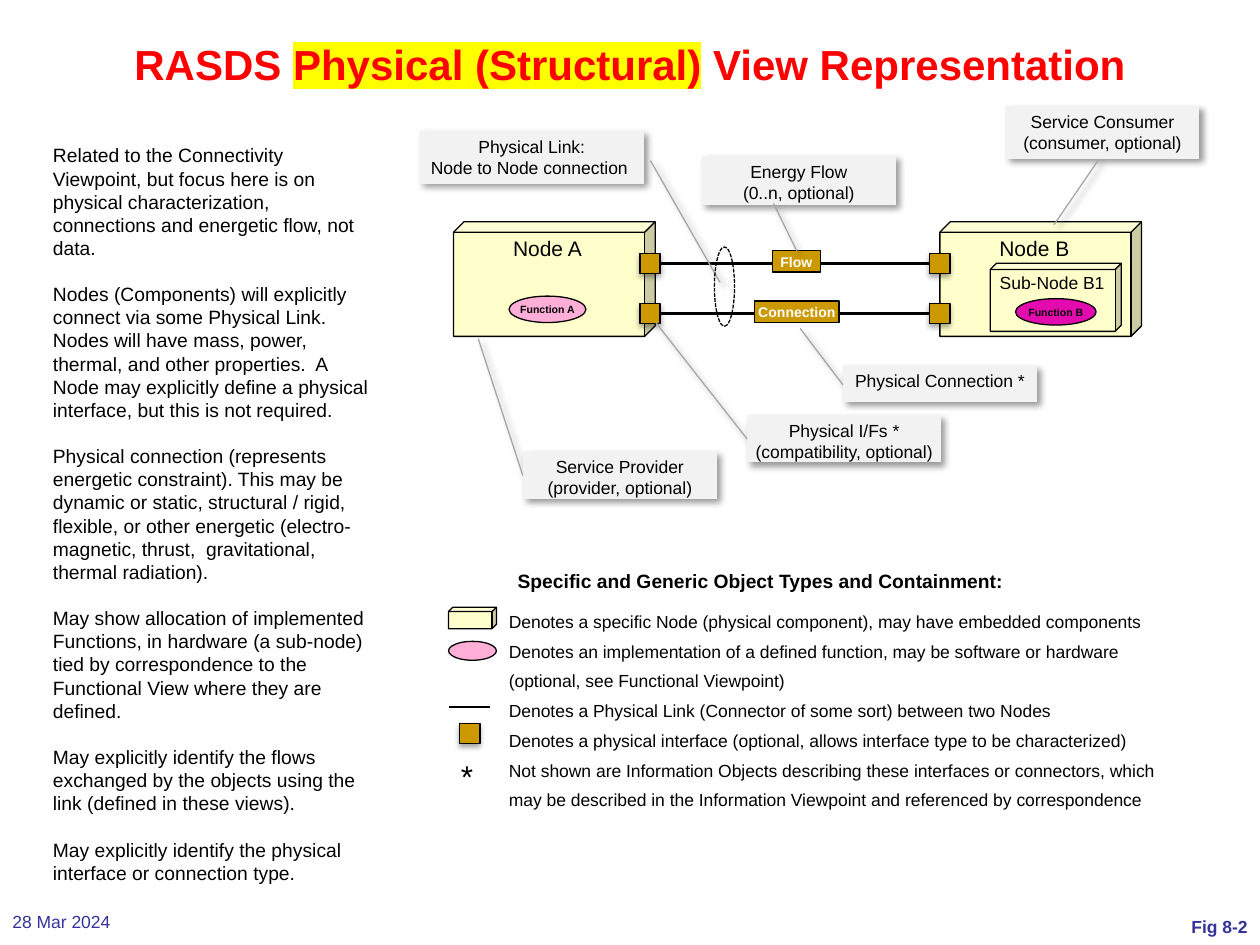
from dataclasses import dataclass

from lxml.etree import SubElement
from pptx import Presentation
from pptx.dml.color import RGBColor
from pptx.enum.dml import MSO_LINE
from pptx.enum.shapes import MSO_CONNECTOR, MSO_SHAPE as Preset
from pptx.enum.text import MSO_ANCHOR as Anchor, MSO_AUTO_SIZE as AutoSize, PP_ALIGN as Align
from pptx.oxml.ns import qn
from pptx.util import Emu, Inches, Pt


@dataclass(frozen=True)
class Theme:
    font: str = "Arial"
    title: str = "FF0000"
    highlight: str = "FFFF00"
    ink: str = "000000"
    footer: str = "333399"
    node: str = "FFFFCC"
    function: str = "FFAED7"
    other_function: str = "E30BAD"
    interface: str = "CC9900"
    callout: str = "F2F2F2"
    leader: str = "A6A6A6"
    light: str = "FFFFFF"
    title_size: int = 24
    star_size: int = 18
    node_size: int = 12
    body_size: int = 11
    label_size: int = 10
    tag_size: int = 8
    function_size: int = 6
    thin: float = 0.75
    link: float = 1.5


THEME = Theme()
INTERFACE_SHADOW = (35, 3.1, 1.8, 90)
CALLOUT_SHADOW = (40, 4, 3, 45)
INTERFACE_SIDE = 0.16
INTERFACE_COLUMNS = (5.08, 7.38)
LINK_ROWS = (2.01, 2.41)
CUBE_DEPTH = 0.091

TITLE = [("RASDS ", False), ("Physical (Structural)", True), (" View Representation", False)]
BODY = [
    "Related to the Connectivity Viewpoint, but focus here is on physical characterization, "
    "connections and energetic flow, not data.",
    "Nodes (Components) will explicitly connect via some Physical Link. Nodes will have mass, power, "
    "thermal, and other properties.  A Node may explicitly define a physical interface, "
    "but this is not required.",
    "Physical connection (represents energetic constraint). This may be dynamic or static, "
    "structural / rigid, flexible, or other energetic (electro-magnetic, thrust,  gravitational, "
    "thermal radiation).",
    "May show allocation of implemented Functions, in hardware (a sub-node) tied by correspondence "
    "to the Functional View where they are defined.",
    "May explicitly identify the flows exchanged by the objects using the link (defined in these views).",
    "May explicitly identify the physical interface or connection type.",
]
LEGEND_TITLE = "Specific and Generic Object Types and Containment:"
LEGEND = [
    "Denotes a specific Node (physical component), may have embedded components",
    "Denotes an implementation of a defined function, may be software or hardware "
    "(optional, see Functional Viewpoint)",
    "Denotes a Physical Link (Connector of some sort) between two Nodes",
    "Denotes a physical interface (optional, allows interface type to be characterized)",
    "Not shown are Information Objects describing these interfaces or connectors, which "
    "may be described in the Information Viewpoint and referenced by correspondence",
]
NODES = [
    ((3.6, 1.76, 1.6, 0.91), "Node A", (3.97, 1.82, 0.75, 0.3), THEME.node_size),
    ((7.46, 1.76, 1.6, 0.91), "Node B", (7.83, 1.82, 0.76, 0.3), THEME.node_size),
    ((7.86, 2.09, 1.04, 0.54), "Sub-Node B1", (7.83, 2.11, 1.04, 0.27), THEME.label_size),
]
FUNCTIONS = [
    ("Function A", (4.04, 2.35, 0.61, 0.21), THEME.function),
    ("Function B", (8.06, 2.37, 0.64, 0.21), THEME.other_function),
]
TAGS = [("Flow", (6.13, 1.99, 0.38, 0.17)), ("Connection", (5.99, 2.39, 0.67, 0.17))]
CALLOUTS = [
    (["Physical Link:\nNode to Node connection "], (3.33, 1.04, 1.78, 0.42), (0.56, -0.03, 2.86, -0.34)),
    (["Service Provider", "(provider, optional)"], (4.15, 3.58, 1.54, 0.38), (0.51, 1, -2.35, 1.23)),
    (["Service Consumer", "(consumer, optional)"], (7.98, 0.84, 1.54, 0.42), (1.02, 0.52, 2.25, 0.75)),
    (["Physical Connection *"], (6.69, 2.9, 1.54, 0.29), (0.53, 1, -1.01, 1.22)),
    (["Energy Flow", "(0..n, optional)"], (5.57, 1.24, 1.54, 0.39), (0.96, 0.63, 1.93, 0.51)),
    (["Physical I/Fs *", "(compatibility, optional)"], (5.93, 3.29, 1.54, 0.38), (0.51, 1, -1.92, 1.47)),
]
FOOTERS = [
    ("28 Mar 2024", (0, 7.17, 1.89, 0.29), Align.LEFT, False),
    ("Fig 8-2", (8.11, 7.21, 1.89, 0.29), Align.RIGHT, True),
]


def rgb(color):
    return RGBColor.from_string(color)


def place(shape, box):
    shape.left, shape.top, shape.width, shape.height = map(Inches, box)


def add_run(paragraph, text, size, color=THEME.ink, bold=False):
    run = paragraph.add_run()
    run.text = text
    run.font.name, run.font.size, run.font.bold = THEME.font, Pt(size), bold
    run.font.color.rgb = rgb(color)
    return run


def write(shape, paragraphs, size, color=THEME.ink, bold=False, align=Align.LEFT,
          anchor=Anchor.TOP, wrap=True, inset=None, spacing=None, after=0):
    frame = shape.text_frame
    frame.word_wrap, frame.vertical_anchor, frame.auto_size = wrap, anchor, AutoSize.NONE
    if inset is not None:
        frame.margin_left = frame.margin_right = Inches(inset)
        frame.margin_top = frame.margin_bottom = Inches(inset)
    for index, text in enumerate(paragraphs):
        paragraph = frame.add_paragraph() if index else frame.paragraphs[0]
        paragraph.alignment = align
        paragraph.space_before, paragraph.space_after = Pt(0), Pt(after)
        if spacing:
            paragraph.line_spacing = spacing
        for part, line in enumerate(text.split("\n")):
            if part:
                paragraph.add_line_break()
            add_run(paragraph, line, size, color, bold)


def add_text(slide, box, paragraphs, size, **style):
    shape = slide.shapes.add_textbox(*map(Inches, box))
    write(shape, paragraphs, size, **style)


def add_shadow(shape, opacity, blur, distance, angle):
    effects = shape._element.spPr.find(qn("a:effectLst"))
    shadow = SubElement(effects, qn("a:outerShdw"), blurRad=str(Pt(blur)), dist=str(Pt(distance)),
                        dir=str(angle * 60000), algn="tl", rotWithShape="0")
    color = SubElement(shadow, qn("a:srgbClr"), val=THEME.ink)
    SubElement(color, qn("a:alpha"), val=str(opacity * 1000))


def add_preset(slide, preset, box, fill=None, line=THEME.ink, adjustments=(), shadow=None):
    shape = slide.shapes.add_shape(preset, *map(Inches, box))
    shape.shadow.inherit = False
    if fill:
        shape.fill.solid()
        shape.fill.fore_color.rgb = rgb(fill)
    else:
        shape.fill.background()
    shape.line.color.rgb, shape.line.width = rgb(line), Pt(THEME.thin)
    for index, value in enumerate(adjustments):
        shape.adjustments[index] = value
    if shadow:
        add_shadow(shape, *shadow)
    return shape


def add_interface(slide, left, top):
    box = (left, top, INTERFACE_SIDE, INTERFACE_SIDE)
    return add_preset(slide, Preset.RECTANGLE, box, THEME.interface, shadow=INTERFACE_SHADOW)


def add_link(slide, left, right, y):
    ends = map(Inches, (left, y, right, y))
    link = slide.shapes.add_connector(MSO_CONNECTOR.STRAIGHT, *ends)
    link.line.color.rgb, link.line.width = rgb(THEME.ink), Pt(THEME.link)
    SubElement(link._element.spPr, qn("a:effectLst"))
    return link


def add_headings(slide):
    title, body = slide.placeholders
    place(title, (0.5, 0.3, 9, 1.25))
    write(title, [], THEME.title_size)
    paragraph = title.text_frame.paragraphs[0]
    paragraph.alignment, paragraph.line_spacing = Align.CENTER, 0.9
    for text, marked in TITLE:
        run = add_run(paragraph, text, THEME.title_size, THEME.title, True)
        if marked:
            highlight = SubElement(run.font._element, qn("a:highlight"))
            SubElement(highlight, qn("a:srgbClr"), val=THEME.highlight)
            run.font._element.find(qn("a:solidFill")).addnext(highlight)
    place(body, (0.32, 1.09, 2.77, 6.02))
    write(body, BODY, THEME.body_size, after=13.3)
    for paragraph in body.text_frame.paragraphs:
        properties = paragraph._p.get_or_add_pPr()
        properties.set("marL", "0")
        properties.set("indent", "0")
        SubElement(properties, qn("a:buNone"))


def add_diagram(slide):
    for box, name, label_box, size in NODES:
        add_preset(slide, Preset.CUBE, box, THEME.node, adjustments=[CUBE_DEPTH])
        add_text(slide, label_box, [name], size, align=Align.CENTER, wrap=False)
    for name, box, fill in FUNCTIONS:
        oval = add_preset(slide, Preset.OVAL, box, fill)
        write(oval, [name], THEME.function_size, bold=True, align=Align.CENTER,
              anchor=Anchor.MIDDLE, wrap=False)
    for top in LINK_ROWS:
        start, end = [add_interface(slide, left, top) for left in INTERFACE_COLUMNS]
        link = add_link(slide, *INTERFACE_COLUMNS, top + INTERFACE_SIDE / 2)
        link.begin_connect(start, 3)
        link.end_connect(end, 1)
    for name, box in TAGS:
        tag = add_preset(slide, Preset.RECTANGLE, box, THEME.interface)
        write(tag, [name], THEME.tag_size, THEME.light, True, Align.CENTER, inset=0.02)
    for lines, box, leader in CALLOUTS:
        callout = add_preset(slide, Preset.LINE_CALLOUT_1_NO_BORDER, box, THEME.callout,
                             THEME.leader, leader, CALLOUT_SHADOW)
        callout._element.spPr.xfrm.set("flipH", "1")
        write(callout, lines, THEME.label_size, align=Align.CENTER, inset=0.04)
    ring = add_preset(slide, Preset.OVAL, (5.67, 1.96, 0.16, 0.63))
    ring.line.dash_style = MSO_LINE.SQUARE_DOT


def add_legend(slide):
    left = 3.56
    add_text(slide, (4.01, 4.47, 4.09, 0.29), [LEGEND_TITLE], THEME.body_size, bold=True, wrap=False)
    add_text(slide, (3.94, 4.73, 5.56, 1.74), LEGEND, THEME.label_size, spacing=Pt(17))
    add_preset(slide, Preset.CUBE, (left, 4.82, 0.38, 0.17), THEME.node, adjustments=[0.2])
    add_preset(slide, Preset.OVAL, (left, 5.09, 0.38, 0.15), THEME.function)
    add_link(slide, left, left + 0.33, 5.61)
    add_interface(slide, 3.65, 5.74)
    add_text(slide, (left, 5.96, 0.3, 0.4), ["*"], THEME.star_size, wrap=False)


def main():
    presentation = Presentation()
    presentation.slide_width, presentation.slide_height = Inches(10), Inches(7.5)
    slide = presentation.slides.add_slide(presentation.slide_layouts[1])
    add_headings(slide)
    add_diagram(slide)
    add_legend(slide)
    for text, box, align, bold in FOOTERS:
        add_text(slide, box, [text], THEME.label_size, color=THEME.footer, bold=bold,
                 align=align, anchor=Anchor.MIDDLE)
    presentation.save("out.pptx")


if __name__ == "__main__":
    main()
